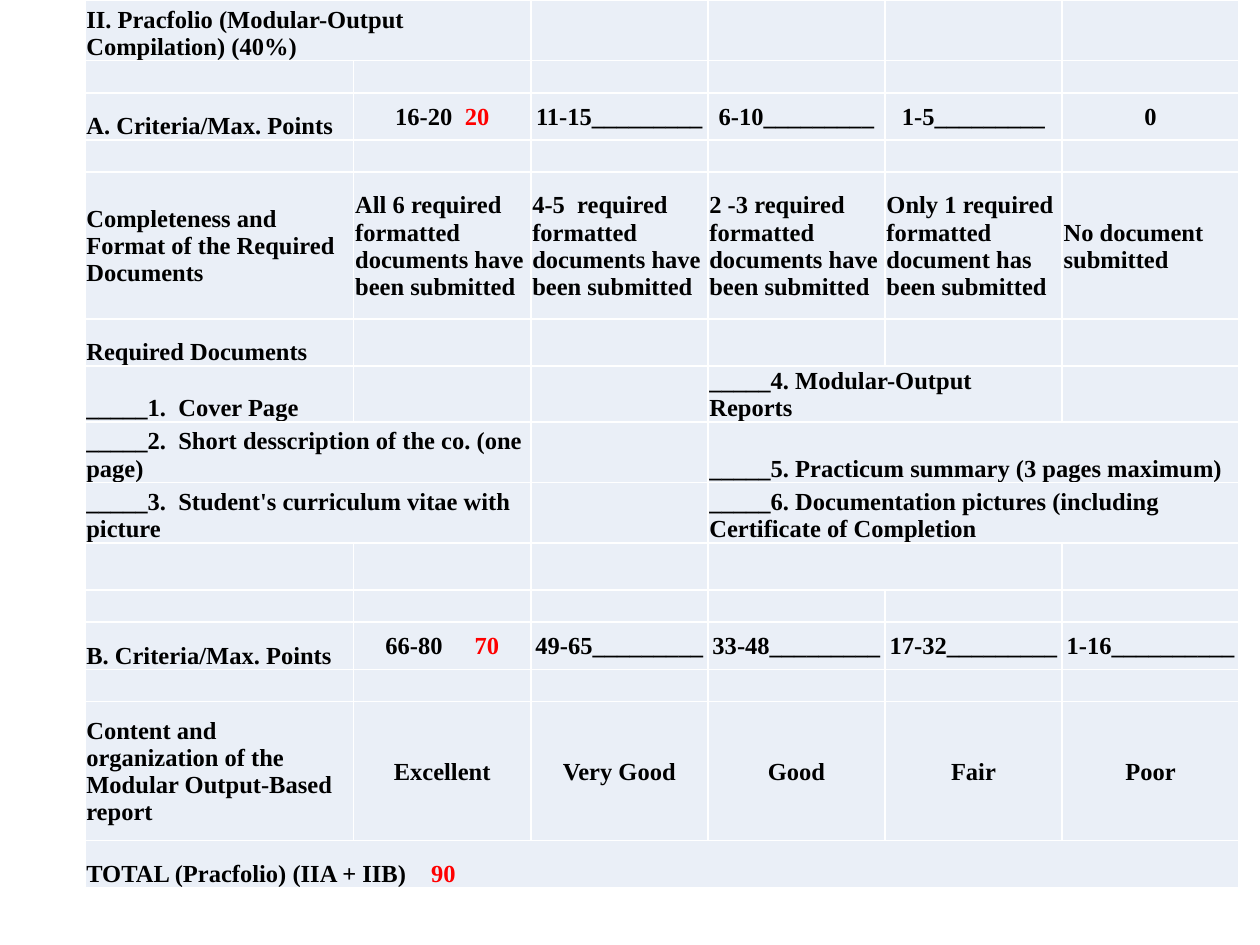
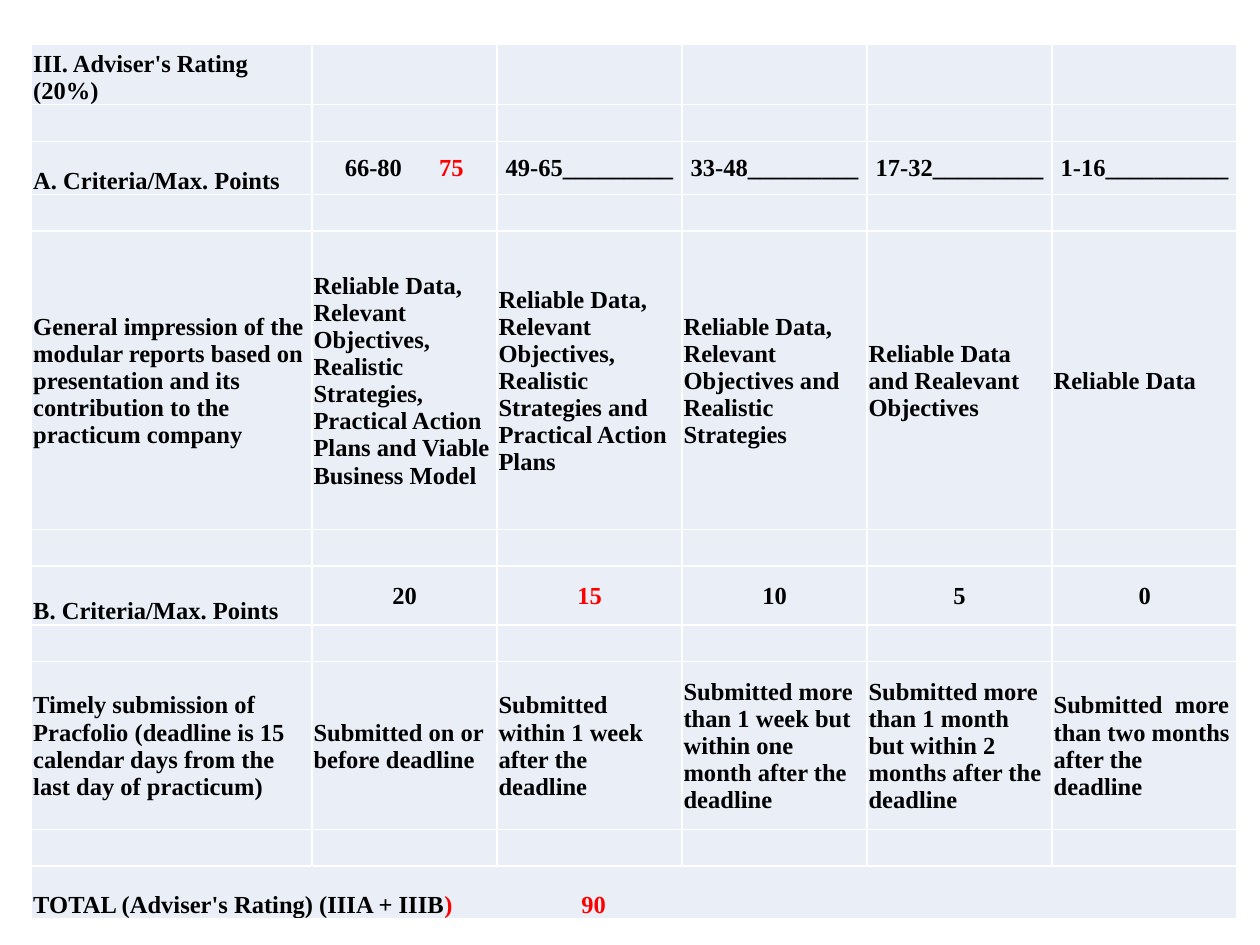
import dataclasses
import itertools

import lxml.etree
import pptx
import pptx.dml.color
import pptx.enum.text
import pptx.oxml.ns
import pptx.util

Cm = pptx.util.Cm
Pt = pptx.util.Pt
qn = pptx.oxml.ns.qn
Anchor = pptx.enum.text.MSO_ANCHOR
Align = pptx.enum.text.PP_ALIGN


@dataclasses.dataclass(frozen=True)
class Theme:
    """Hold the colours, type and spacing shared by the rubric pages."""
    font: str = "Times New Roman"
    size: int = 14
    ink: str = "000000"
    score: str = "FF0000"
    cell: str = "EAEFF7"
    rule: str = "FFFFFF"
    rule_width: int = 1
    inset: float = 0.03


THEME = Theme()
COLUMN_COUNT = 6


@dataclasses.dataclass
class Row:
    """Describe one table row; a bar in a text starts the scored part."""
    height: float
    texts: tuple = ()
    label_anchor: Anchor = Anchor.BOTTOM
    anchor: Anchor = Anchor.BOTTOM
    align: Align = Align.LEFT
    spans: dict = dataclasses.field(default_factory=dict)
    tab: float = 0
    tab_inset: float = THEME.inset


def points_row(height, *texts, **options):
    """Return a row with a bottom label and centred point ranges."""
    return Row(height, texts, anchor=Anchor.MIDDLE, align=Align.CENTER, **options)


def detail_row(height, *texts, align=Align.LEFT):
    """Return a row of vertically centred descriptions."""
    return Row(height, texts, Anchor.MIDDLE, Anchor.MIDDLE, align)


def total_row(height, text, tab):
    """Return a full-width total with its score at a tab stop."""
    return Row(height, (text,), spans={0: COLUMN_COUNT}, tab=tab)


def add_rules(cell):
    """Draw the thin rules on all four sides of a cell."""
    properties = cell._tc.get_or_add_tcPr()
    for side in ("lnL", "lnR", "lnT", "lnB"):
        line = lxml.etree.SubElement(
            properties, qn(f"a:{side}"), w=str(Pt(THEME.rule_width)))
        fill = lxml.etree.SubElement(line, qn("a:solidFill"))
        lxml.etree.SubElement(fill, qn("a:srgbClr"), val=THEME.rule)


def add_tab_stop(para, position):
    """Add one left tab stop to a paragraph."""
    stops = lxml.etree.SubElement(para._p.get_or_add_pPr(), qn("a:tabLst"))
    lxml.etree.SubElement(stops, qn("a:tab"), pos=str(Cm(position)), algn="l")


def write_text(cell, text, *, anchor, align, tab=0):
    """Write a cell's text, colouring the part after the bar as a score."""
    cell.vertical_anchor = anchor
    para = cell.text_frame.paragraphs[0]
    para.alignment = align
    if tab:
        add_tab_stop(para, tab)
    for part, color in zip(text.split("|"), (THEME.ink, THEME.score)):
        if part:
            span = para.add_run()
            span.text = part
            span.font.name = THEME.font
            span.font.size = Pt(THEME.size)
            span.font.bold = True
            span.font.color.rgb = pptx.dml.color.RGBColor.from_string(color)


def style_cell(cell):
    """Give a cell its fill, rules, insets and empty-line size."""
    cell.margin_left = cell.margin_right = cell.margin_top = Cm(THEME.inset)
    cell.margin_bottom = 0
    add_rules(cell)
    cell.fill.solid()
    cell.fill.fore_color.rgb = pptx.dml.color.RGBColor.from_string(THEME.cell)
    para = cell.text_frame.paragraphs[0]
    lxml.etree.SubElement(para._p, qn("a:endParaRPr"), sz=str(THEME.size * 100))


def fill_row(table, index, row):
    """Set one row's height, merged cells and texts."""
    table.rows[index].height = Cm(row.height)
    for column, count in row.spans.items():
        table.cell(index, column).merge(table.cell(index, column + count - 1))
    for column, text in itertools.zip_longest(
            range(COLUMN_COUNT), row.texts, fillvalue=""):
        cell = table.cell(index, column)
        style_cell(cell)
        if not text:
            continue
        tabbed = "\t" in text
        if tabbed:
            cell.margin_left = Cm(row.tab_inset)
        write_text(
            cell, text,
            anchor=row.anchor if column else row.label_anchor,
            align=row.align if column and not tabbed else Align.LEFT,
            tab=row.tab if tabbed else 0)


def add_rubric(deck, rows, *, left, top, label_width, level_width):
    """Add a page holding one rubric table."""
    page = deck.slides.add_slide(deck.slide_layouts[6])
    widths = [label_width] + [level_width] * (COLUMN_COUNT - 1)
    table = page.shapes.add_table(
        len(rows), COLUMN_COUNT, Cm(left), Cm(top), Cm(sum(widths)),
        Cm(sum(row.height for row in rows))).table
    table.first_row = table.horz_banding = False
    for column, width in zip(table.columns, widths):
        column.width = Cm(width)
    for index, row in enumerate(rows):
        fill_row(table, index, row)


def pracfolio_rows():
    """Return the rows of the Pracfolio rubric."""
    gap, line, double = 0.65, 0.95, 1.22
    return [
        Row(double, ("II. Pracfolio (Modular-Output Compilation) (40%)",), spans={0: 2}),
        Row(gap),
        points_row(line, "A. Criteria/Max. Points", "16-20  |20", "11-15_________",
                   "6-10_________", "1-5_________", "0"),
        Row(gap),
        detail_row(2.96, "Completeness and Format of the Required Documents",
                   "All 6 required formatted documents have been submitted",
                   "4-5  required formatted documents have been submitted",
                   "2 -3 required formatted documents have been submitted",
                   "Only 1 required formatted document has been submitted",
                   "No document submitted"),
        Row(line, ("Required Documents",)),
        Row(line, ("_____1.  Cover Page", "", "", "_____4. Modular-Output Reports"),
            spans={3: 2}),
        Row(double, ("_____2.  Short desscription of the co. (one page)", "", "",
                     "_____5. Practicum summary (3 pages maximum)"), spans={0: 2, 3: 3}),
        Row(double, ("_____3.  Student's curriculum vitae with picture", "", "",
                     "_____6. Documentation pictures (including Certificate of Completion"),
            spans={0: 2, 3: 3}),
        Row(line, spans={3: 2}),
        Row(gap),
        points_row(line, "B. Criteria/Max. Points", "66-80\t|70", "49-65_________",
                   "33-48_________", "17-32_________", "1-16__________",
                   tab=1.8, tab_inset=0.64),
        Row(gap),
        detail_row(2.8, "Content and organization of the Modular Output-Based report",
                   "Excellent", "Very Good", "Good", "Fair", "Poor", align=Align.CENTER),
        total_row(line, "TOTAL (Pracfolio) (IIA + IIB)\t|90", 6.95),
    ]


def adviser_rows():
    """Return the rows of the adviser's rating rubric."""
    gap, line = 0.74, 1.07
    return [
        Row(1.22, ("III. Adviser's Rating (20%)",)),
        Row(gap),
        points_row(line, "A. Criteria/Max. Points", "66-80\t|75", "49-65_________",
                   "33-48_________", "17-32_________", "1-16__________",
                   tab=1.9, tab_inset=0.66),
        Row(gap),
        detail_row(6.01, "General impression of the modular reports based on presentation "
                   "and its contribution to the practicum company",
                   "Reliable Data, Relevant Objectives, Realistic Strategies, "
                   "Practical Action Plans and Viable Business Model",
                   "Reliable Data, Relevant Objectives, Realistic Strategies "
                   "and Practical Action Plans",
                   "Reliable Data, Relevant Objectives and Realistic Strategies",
                   "Reliable Data  and Realevant Objectives", "Reliable Data"),
        Row(gap),
        points_row(1.19, "B. Criteria/Max. Points", "20", "|15", "10", "5", "0"),
        Row(gap),
        detail_row(3.38, "Timely submission of Pracfolio (deadline is 15 calendar days "
                   "from the last day of practicum)",
                   "Submitted on or before deadline",
                   "Submitted within 1 week after the deadline",
                   "Submitted more than 1 week but within one month after the deadline",
                   "Submitted more than 1 month but within 2 months after the deadline",
                   "Submitted  more than two months after the deadline"),
        Row(gap),
        total_row(line, "TOTAL (Adviser's Rating) (IIIA + IIIB|)\t90", 11.05),
    ]


def main():
    """Build and save both rubric pages."""
    deck = pptx.Presentation()
    deck.slide_width, deck.slide_height = Cm(25.4), Cm(19.05)
    add_rubric(deck, pracfolio_rows(), left=1.71, top=0,
               label_width=5.42, level_width=3.57)
    add_rubric(deck, adviser_rows(), left=0.64, top=0.89,
               label_width=5.65, level_width=3.73)
    deck.save("out.pptx")


if __name__ == "__main__":
    main()
